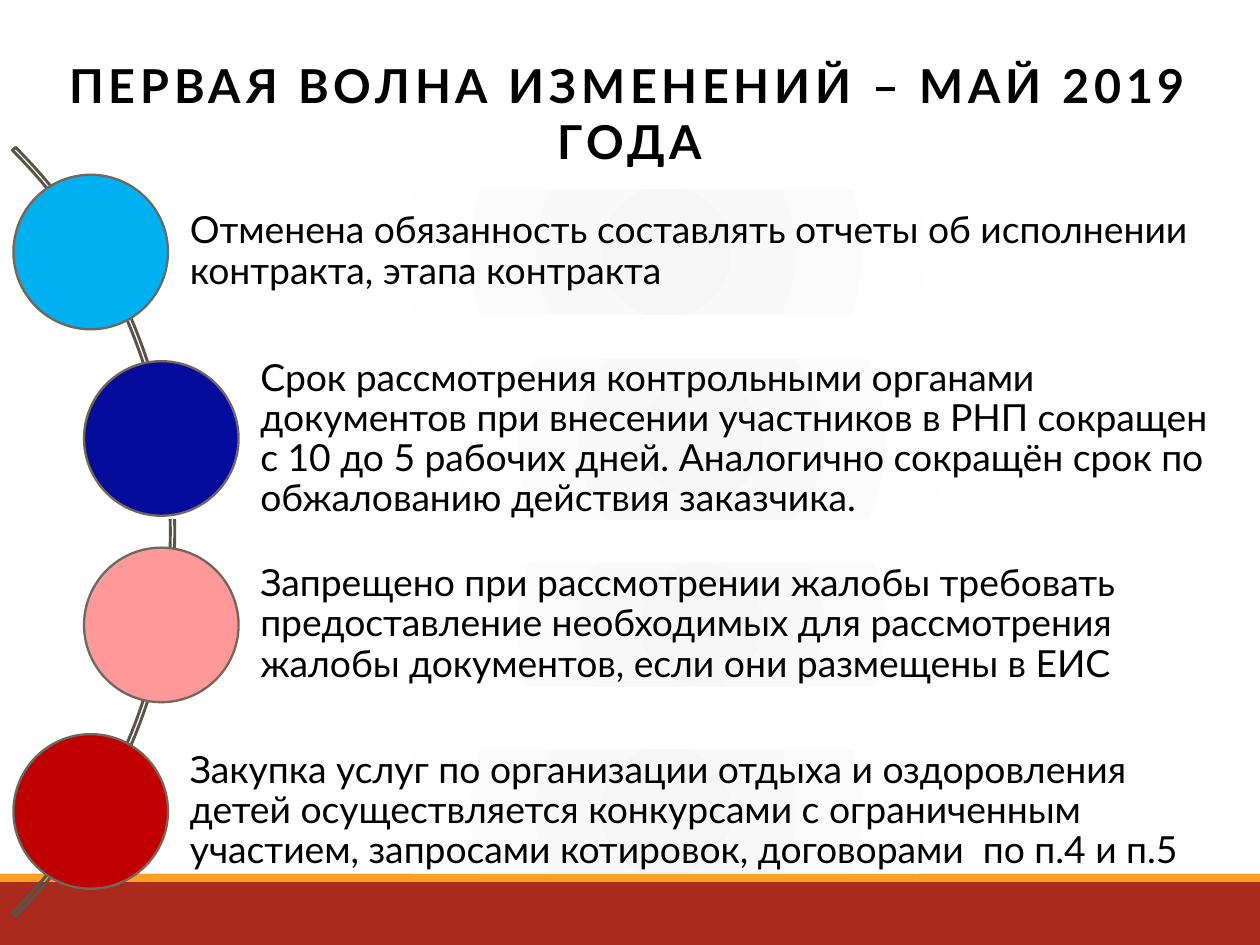
from pptx import Presentation
from pptx.dml.color import RGBColor
from pptx.enum.shapes import MSO_SHAPE
from pptx.enum.text import MSO_ANCHOR, PP_ALIGN
from pptx.oxml import parse_xml
from pptx.oxml.ns import qn
from pptx.util import Inches, Pt

RECT, OVAL, ARC = MSO_SHAPE.RECTANGLE, MSO_SHAPE.OVAL, MSO_SHAPE.BLOCK_ARC
TOP, MIDDLE = MSO_ANCHOR.TOP, MSO_ANCHOR.MIDDLE
LEFT, CENTER = PP_ALIGN.LEFT, PP_ALIGN.CENTER

COLORS = {
    "brick": "AA2B1E", "orange": "FDA023", "arc": "5A534A", "outline": "71685C",
    "sky": "00B0F0", "navy": "050C9B", "pink": "FF9999", "red": "C00000",
    "text": "000000",
}
GLOW = """<a:gradFill xmlns:a="http://schemas.openxmlformats.org/drawingml/2006/main" rotWithShape="1">
<a:gsLst><a:gs pos="0"><a:srgbClr val="F6F6F6"/></a:gs><a:gs pos="45000"><a:srgbClr val="FEFEFE"/></a:gs>
<a:gs pos="100000"><a:srgbClr val="FFFFFF"/></a:gs></a:gsLst>
<a:path path="circle"><a:fillToRect l="100000" t="100000" r="100000" b="100000"/></a:path></a:gradFill>"""

ITEMS = [
    ("sky", 0.08, 1.13, 0.74,
     "Отменена обязанность составлять отчеты об исполнении контракта, этапа контракта"),
    ("navy", 0.5, 2.14, 0.95,
     "Срок рассмотрения контрольными органами документов при внесении участников в РНП сокращен "
     "с 10 до 5 рабочих дней. Аналогично сокращён срок по обжалованию действия заказчика."),
    ("pink", 0.5, 3.35, 0.74,
     "Запрещено при рассмотрении жалобы требовать предоставление необходимых для рассмотрения "
     "жалобы документов, если они размещены в ЕИС"),
    ("red", 0.08, 4.46, 0.74,
     "Закупка услуг по организации отдыха и оздоровления детей осуществляется конкурсами "
     "с ограниченным участием, запросами котировок, договорами  по п.4 и п.5"),
]
DIAMETER = 0.92
RIGHT_EDGE = 7.39
WIDTH = 7.5
HEIGHT = WIDTH * 3 / 4

prs = Presentation()
prs.slide_width, prs.slide_height = Inches(WIDTH), Inches(HEIGHT)
s = prs.slides.add_slide(prs.slide_layouts[6])


def add_shape(kind, x, y, w, h, fill=None, line=None, width=1):
    sp = s.shapes.add_shape(kind, Inches(x), Inches(y), Inches(w), Inches(h))
    sp.shadow.inherit = False
    if fill:
        sp.fill.solid()
        sp.fill.fore_color.rgb = RGBColor.from_string(COLORS[fill])
    else:
        sp.fill.background()
    if line:
        sp.line.color.rgb = RGBColor.from_string(COLORS[line])
        sp.line.width = Pt(width)
    else:
        sp.line.fill.background()
    return sp


def add_text(sp, text, size, align, anchor):
    tf = sp.text_frame
    tf.word_wrap = True
    tf.vertical_anchor = anchor
    p = tf.paragraphs[0]
    p.alignment = align
    r = p.add_run()
    r.text = text
    r.font.size = Pt(size)
    r.font.name = "Lato"
    r.font.color.rgb = RGBColor.from_string(COLORS["text"])
    return p, r


add_shape(RECT, 0, 5.25, WIDTH, HEIGHT - 5.25, "brick")
add_shape(RECT, 0, 5.2, WIDTH, 0.05, "orange")

title = s.shapes.add_textbox(Inches(0), Inches(0.29), Inches(WIDTH), Inches(0.44))
p, r = add_text(title, "ПЕРВАЯ ВОЛНА ИЗМЕНЕНИЙ – МАЙ 2019 ГОДА", 20, CENTER, TOP)
r.font.bold = True
r.font._element.set("spc", "200")

arc = add_shape(ARC, -5.43, -0.07, 6.47, 6.47, line="arc", width=1.25)
for i, value in enumerate((189, 27, 0.004)):
    arc.adjustments[i] = value

for i, (color, circle_x, y, h, text) in enumerate(ITEMS):
    x = circle_x + DIAMETER / 2
    band = add_shape(RECT, x, y, RIGHT_EDGE - x, h)
    spPr = band._element.spPr
    spPr.replace(spPr.find(qn("a:noFill")), parse_xml(GLOW))
    p, r = add_text(band, text, 16, LEFT, MIDDLE)
    p.line_spacing = 0.9
    tf = band.text_frame
    tf.margin_left = Inches(0.59)
    tf.margin_top = tf.margin_right = tf.margin_bottom = Inches(0.04)
    add_shape(OVAL, circle_x, 1.04 + 1.11 * i, DIAMETER, DIAMETER, color, "outline")

prs.save("out.pptx")
